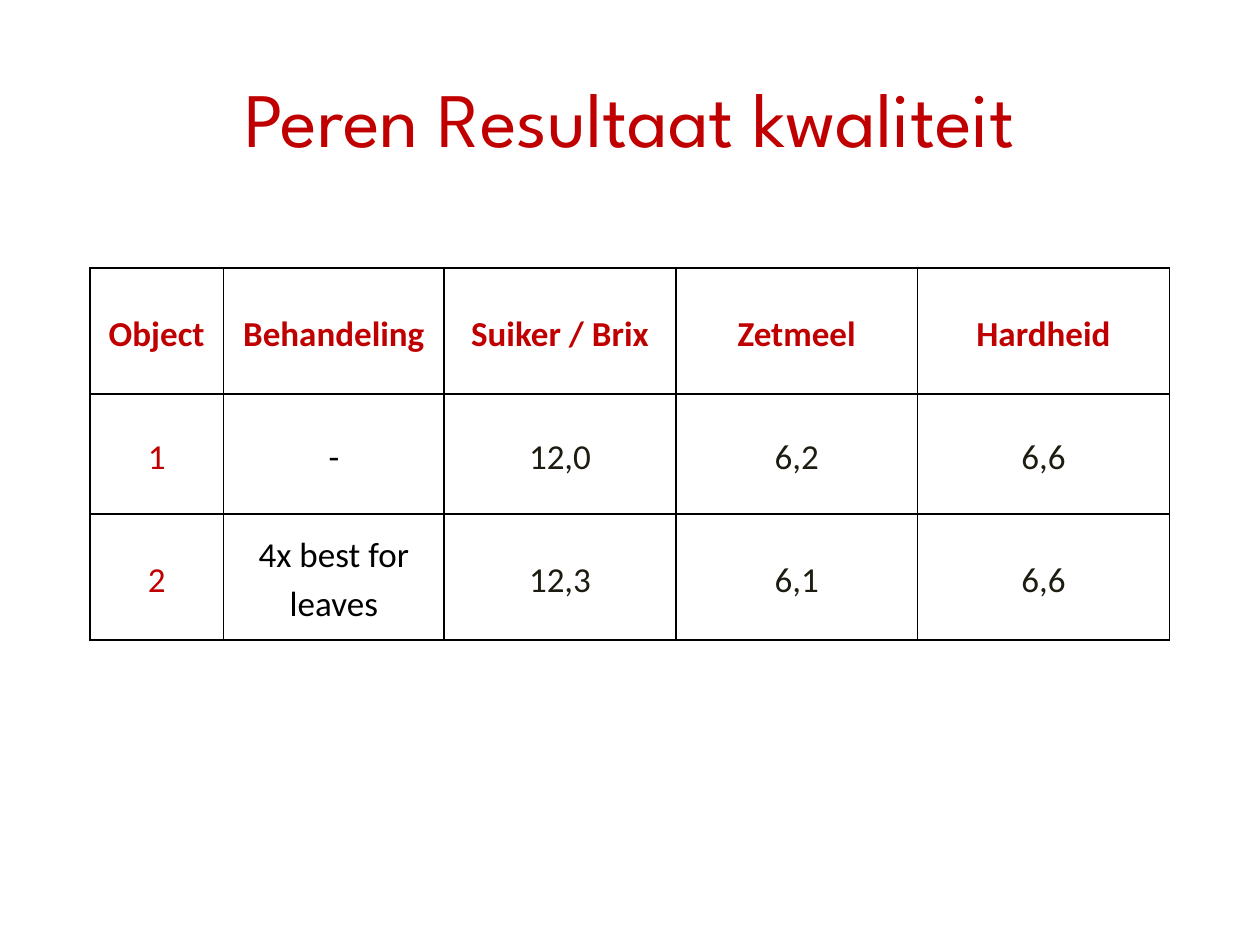
from lxml import etree
from pptx import Presentation
from pptx.dml.color import RGBColor
from pptx.enum.text import MSO_ANCHOR, PP_ALIGN
from pptx.oxml.ns import qn
from pptx.util import Pt

CENTER = PP_ALIGN.CENTER
MIDDLE = MSO_ANCHOR.MIDDLE
RED = RGBColor(0xC0, 0x00, 0x00)
BLACK = RGBColor(0x00, 0x00, 0x00)
DARK = RGBColor(0x1E, 0x1C, 0x11)

COLUMN_WIDTHS = [76.5, 126, 132.5, 138, 144]
ROW_HEIGHTS = [72, 68.5, 72]
COLUMN_COLORS = [RED, BLACK, DARK, DARK, DARK]
RESULTS = [
    ["Object", "Behandeling", "Suiker / Brix", "Zetmeel", "Hardheid"],
    ["1", "-", "12,0", "6,2", "6,6"],
    ["2", "4x best for leaves", "12,3", "6,1", "6,6"],
]


def add_text(para, text, font_name, size, color, bold=False):
    para.alignment = CENTER
    span = para.add_run()
    span.text = text
    span.font.name = font_name
    span.font.size = Pt(size)
    span.font.bold = bold
    span.font.color.rgb = color


def add_borders(cell):
    properties = cell._tc.get_or_add_tcPr()
    for position, side in enumerate(("a:lnL", "a:lnR", "a:lnT", "a:lnB")):
        line = etree.Element(qn(side), w=str(Pt(1)))
        fill = etree.SubElement(line, qn("a:solidFill"))
        etree.SubElement(fill, qn("a:srgbClr"), val=str(BLACK))
        properties.insert(position, line)


deck = Presentation()
deck.slide_width = Pt(720)
deck.slide_height = Pt(540)
page = deck.slides.add_slide(deck.slide_layouts[5])

title = page.shapes.title
title.left, title.top, title.width, title.height = Pt(36), Pt(21.6), Pt(648), Pt(90)
title.text_frame.vertical_anchor = MIDDLE
add_text(title.text_frame.paragraphs[0], "Peren Resultaat kwaliteit", "League Spartan", 44, RED)

table = page.shapes.add_table(
    len(ROW_HEIGHTS), len(COLUMN_WIDTHS),
    Pt(51.3), Pt(153.2), Pt(sum(COLUMN_WIDTHS)), Pt(sum(ROW_HEIGHTS)),
).table
table.horz_banding = False
for column, width in zip(table.columns, COLUMN_WIDTHS):
    column.width = Pt(width)
for row, height in zip(table.rows, ROW_HEIGHTS):
    row.height = Pt(height)

for row_index, values in enumerate(RESULTS):
    header = row_index == 0
    for column_index, value in enumerate(values):
        cell = table.cell(row_index, column_index)
        cell.fill.background()
        cell.vertical_anchor = MIDDLE
        cell.margin_left = cell.margin_right = Pt(5)
        cell.margin_top = cell.margin_bottom = Pt(0)
        para = cell.text_frame.paragraphs[0]
        para.line_spacing = 1.15
        color = RED if header else COLUMN_COLORS[column_index]
        add_text(para, value, "Calibri", 20, color, header)
        add_borders(cell)

deck.save("out.pptx")
